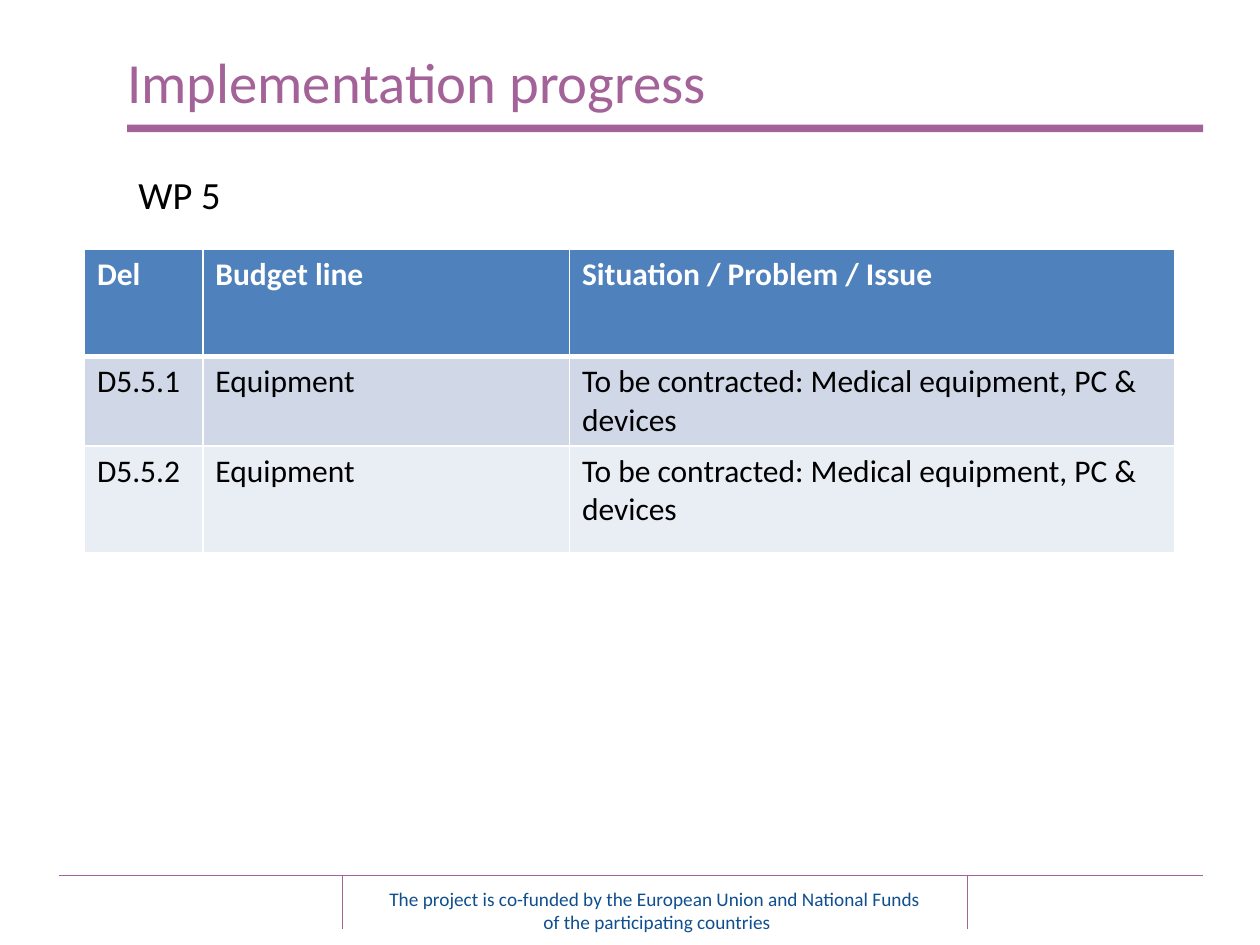
from lxml.etree import SubElement
from pptx import Presentation
from pptx.dml.color import RGBColor
from pptx.enum.shapes import MSO_CONNECTOR, MSO_SHAPE
from pptx.enum.text import MSO_ANCHOR, PP_ALIGN
from pptx.oxml.ns import qn
from pptx.util import Inches, Pt

COLORS = {
    "accent": "A36298",
    "footer": "0F4F8F",
    "text": "000000",
    "white": "FFFFFF",
    "header": "4F81BD",
    "band_dark": "D0D8E8",
    "band_light": "E9EDF4",
}


def rgb(name):
    return RGBColor.from_string(COLORS[name])


def write(tf, text, size=18, color="text", bold=False, align=PP_ALIGN.LEFT,
          anchor=MSO_ANCHOR.TOP):
    tf.word_wrap = True
    tf.vertical_anchor = anchor
    p = tf.paragraphs[0]
    p.text = text
    p.alignment = align
    for r in p.runs:
        r.font.name = "Calibri"
        r.font.size = Pt(size)
        r.font.bold = bold
        r.font.color.rgb = rgb(color)
    return p


prs = Presentation()
prs.slide_width, prs.slide_height = Inches(10), Inches(7.5)
s = prs.slides.add_slide(prs.slide_layouts[5])

# Footer rules
for x1, y1, x2, y2 in [(0.47, 6.95, 9.55, 6.95),
                       (2.72, 6.95, 2.72, 7.37),
                       (7.68, 6.95, 7.68, 7.37)]:
    line = s.shapes.add_connector(MSO_CONNECTOR.STRAIGHT, Inches(x1), Inches(y1),
                                  Inches(x2), Inches(y2))
    line.line.color.rgb = rgb("accent")
    line.line.width = Pt(0.75)
    SubElement(line._element.spPr, qn("a:effectLst"))

# Bar under the title
bar = s.shapes.add_shape(MSO_SHAPE.RECTANGLE, Inches(1.01), Inches(0.99),
                         Inches(8.54), Inches(0.06))
bar.shadow.inherit = False
bar.fill.solid()
bar.fill.fore_color.rgb = rgb("accent")
bar.line.fill.background()

# Footer text
footer = s.shapes.add_textbox(Inches(2.75), Inches(6.99), Inches(4.93), Inches(0.47))
write(footer.text_frame,
      "The project is co-funded by the European Union and National Funds \n"
      "of the participating countries".replace("\n", "\v"),
      size=11, color="footer", align=PP_ALIGN.CENTER)

# Title
title = s.shapes.title
title.left, title.top = Inches(0.91), Inches(0.3)
title.width, title.height = Inches(8.59), Inches(0.69)
write(title.text_frame, "Implementation progress", size=32.4, color="accent",
      anchor=MSO_ANCHOR.MIDDLE)

# Work package label
label = s.shapes.add_textbox(Inches(0.5), Inches(1.31), Inches(9), Inches(5.39))
p = write(label.text_frame, "WP 5", size=22)
p._p.get_or_add_pPr().set("marL", str(Inches(0.5)))

# Budget table
rows = [
    ("Del", "Budget line", "Situation / Problem / Issue"),
    ("D5.5.1", "Equipment", "To be contracted: Medical equipment, PC & devices"),
    ("D5.5.2", "Equipment", "To be contracted: Medical equipment, PC & devices"),
]
fills = ["header", "band_dark", "band_light"]
table = s.shapes.add_table(3, 3, Inches(0.67), Inches(1.98),
                           Inches(8.65), Inches(2.41)).table
for col, width in zip(table.columns, [0.94, 2.91, 4.8]):
    col.width = Inches(width)
for row, height in zip(table.rows, [0.85, 0.71, 0.85]):
    row.height = Inches(height)

for i, texts in enumerate(rows):
    for j, text in enumerate(texts):
        cell = table.cell(i, j)
        write(cell.text_frame, text, color="white" if i == 0 else "text", bold=i == 0)
        # White borders, thick between the header and the body
        tcPr = cell._tc.get_or_add_tcPr()
        for side in ("L", "R", "T", "B"):
            thick = (i, side) in [(0, "B"), (1, "T")]
            ln = SubElement(tcPr, qn(f"a:ln{side}"), w=str(Pt(3 if thick else 1)))
            fill = SubElement(ln, qn("a:solidFill"))
            SubElement(fill, qn("a:srgbClr"), val=COLORS["white"])
        cell.fill.solid()
        cell.fill.fore_color.rgb = rgb(fills[i])

prs.save("out.pptx")
